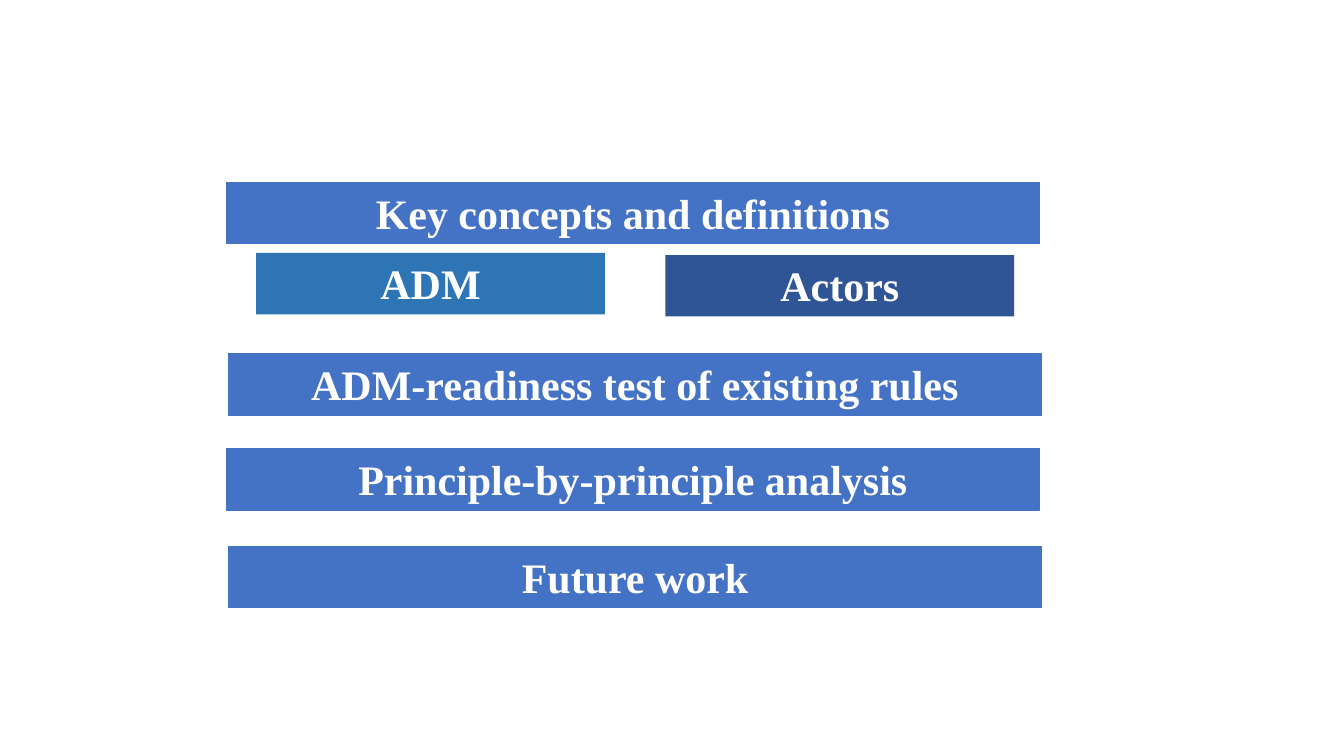
import pptx
import pptx.dml.color
import pptx.enum.shapes
import pptx.enum.text
import pptx.util

Inches = pptx.util.Inches
Pt = pptx.util.Pt

COLORS = {"main": "4472C4", "adm": "2E75B6", "actors": "2F5597", "text": "FFFFFF"}
FONT = "Times New Roman"
BAR_W, HALF_W, BAR_H = 8.06, 3.46, 0.61

SECTIONS = [
    ("Key concepts and definitions", 0, 0),
    ("ADM-readiness test of existing rules", 0.02, 1.7),
    ("Principle-by-principle analysis", 0, 2.64),
    ("Future work", 0.02, 3.61),
]
CONCEPTS = [("ADM", 0, 0, "adm"), ("Actors", 4.06, 0.02, "actors")]


def rgb(name):
    return pptx.dml.color.RGBColor.from_string(COLORS[name])


def add_bar(slide, x, y, w, text, color, outlined=False):
    sp = slide.shapes.add_shape(
        pptx.enum.shapes.MSO_SHAPE.RECTANGLE,
        Inches(x), Inches(y), Inches(w), Inches(BAR_H))
    sp.shadow.inherit = False
    sp.fill.solid()
    sp.fill.fore_color.rgb = rgb(color)
    if outlined:
        sp.line.color.rgb = rgb(color)
        sp.line.width = Pt(0.75)
    else:
        sp.line.fill.background()
    tf = sp.text_frame
    tf.word_wrap = True
    tf.auto_size = pptx.enum.text.MSO_AUTO_SIZE.SHAPE_TO_FIT_TEXT
    tf.vertical_anchor = pptx.enum.text.MSO_ANCHOR.TOP
    p = tf.paragraphs[0]
    p.text = text
    p.alignment = pptx.enum.text.PP_ALIGN.CENTER
    p.font.name = FONT
    p.font.size = Pt(30)
    p.font.bold = True
    p.font.color.rgb = rgb("text")


def add_sections(slide, left, top):
    for text, dx, dy in SECTIONS:
        add_bar(slide, left + dx, top + dy, BAR_W, text, "main", outlined=True)


def add_concepts(slide, left, top):
    for text, dx, dy, color in CONCEPTS:
        add_bar(slide, left + dx, top + dy, HALF_W, text, color)


def main():
    prs = pptx.Presentation()
    prs.slide_width = Inches(13.33)
    prs.slide_height = Inches(7.5)
    slide = prs.slides.add_slide(prs.slide_layouts[6])
    add_sections(slide, 2.25, 1.81)
    add_concepts(slide, 2.54, 2.51)
    prs.save("out.pptx")


if __name__ == "__main__":
    main()
